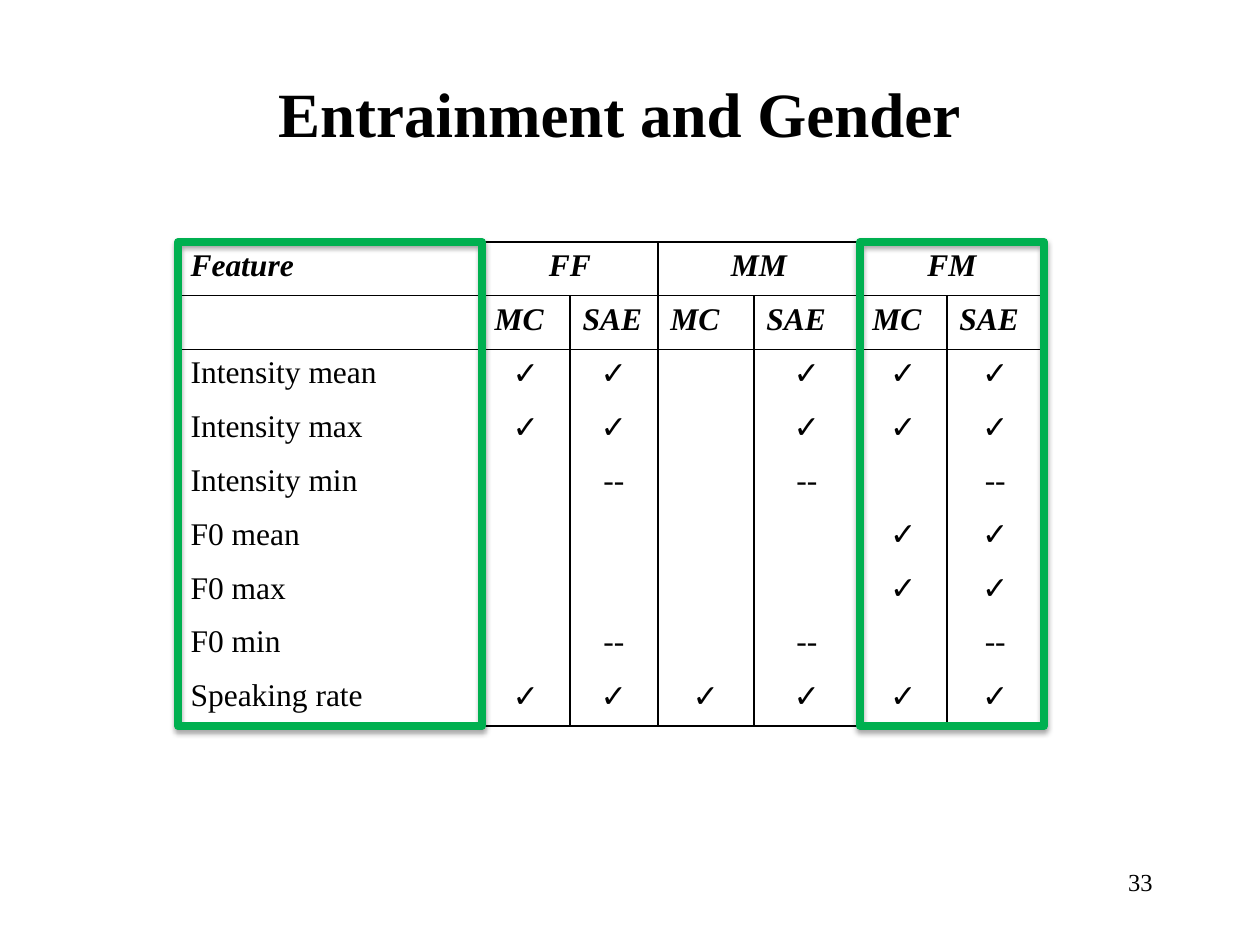
import pptx
import pptx.util
import pptx.oxml
import pptx.oxml.ns
import pptx.dml.color
import pptx.enum.shapes
import pptx.enum.text

SCALE = 914400 / 126  # EMU in one px
COLORS = {"ink": "000000", "mark": "00B050"}
SERIF, SANS = "Times New Roman", "Arial"
ALIGN = pptx.enum.text.PP_ALIGN
ANCHOR = pptx.enum.text.MSO_ANCHOR

# Table content
GROUPS = ["FF", "MM", "FM"]
CORPORA = ["MC", "SAE"]
ROWS = [
    ["Intensity mean", "✓", "✓", "", "✓", "✓", "✓"],
    ["Intensity max", "✓", "✓", "", "✓", "✓", "✓"],
    ["Intensity min", "", "--", "", "--", "", "--"],
    ["F0 mean", "", "", "", "", "✓", "✓"],
    ["F0 max", "", "", "", "", "✓", "✓"],
    ["F0 min", "", "--", "", "--", "", "--"],
    ["Speaking rate", "✓", "✓", "✓", "✓", "✓", "✓"],
]
WIDTHS = [304, 88, 88, 96, 106, 87, 97]
LEFT, TOP, HEIGHT = 178, 242, 484


def px(n):
    return pptx.util.Emu(round(n * SCALE))


def rgb(name):
    return pptx.dml.color.RGBColor.from_string(COLORS[name])


def write(frame, text, align, **form):
    """Fill a text frame with one formatted line."""
    par = frame.paragraphs[0]
    par.alignment = align
    run = par.add_run()
    run.text = text
    look = {"name": SERIF, "size": pptx.util.Pt(18), "bold": False, "italic": False}
    for key, value in (look | form).items():
        setattr(run.font, key, value)
    run.font.color.rgb = rgb("ink")


def label(slide, box, text, align, anchor, **form):
    frame = slide.shapes.add_textbox(*map(px, box)).text_frame
    frame.word_wrap = True
    frame.vertical_anchor = anchor
    write(frame, text, align, **form)


def rule(cell, sides):
    """Draw thin lines on the named sides and none on the rest."""
    props = cell._tc.get_or_add_tcPr()
    for side in "LRTB":
        fill = "<a:noFill/>"
        if side in sides:
            fill = f'<a:solidFill><a:srgbClr val="{COLORS["ink"]}"/></a:solidFill>'
        props.append(pptx.oxml.parse_xml(
            f'<a:ln{side} {pptx.oxml.ns.nsdecls("a")} w="12700">{fill}</a:ln{side}>'))
    cell.fill.background()


def grid(slide):
    head = ["Feature"] + [text for group in GROUPS for text in (group, "")]
    rows = [head, [""] + CORPORA * len(GROUPS)] + ROWS
    table = slide.shapes.add_table(
        len(rows), len(WIDTHS), px(LEFT), px(TOP), px(sum(WIDTHS)), px(HEIGHT)).table
    table.first_row = table.horz_banding = False
    for col, width in zip(table.columns, WIDTHS):
        col.width = px(width)
    for r, texts in enumerate(rows):
        table.rows[r].height = px(HEIGHT / len(rows))
        for c, text in enumerate(texts):
            cell = table.cell(r, c)
            top = "T" if r <= 2 else ""
            base = "B" if r < 2 or r == len(rows) - 1 else ""
            rule(cell, "LR" + top + base)
            if text:
                center = c > 0 and r != 1
                write(cell.text_frame, text, ALIGN.CENTER if center else ALIGN.LEFT,
                      name=SANS if text == "✓" else SERIF, bold=r < 2, italic=r < 2)
    for c in range(1, len(WIDTHS), 2):
        table.cell(0, c).merge(table.cell(0, c + 1))


def frame(slide, first, last):
    """Outline a run of table columns."""
    left = LEFT + sum(WIDTHS[:first])
    box = left, TOP, sum(WIDTHS[first:last + 1]), HEIGHT
    shape = slide.shapes.add_shape(
        pptx.enum.shapes.MSO_SHAPE.RECTANGLE, *map(px, box))
    shape.fill.background()
    shape.line.color.rgb = rgb("mark")
    shape.line.width = pptx.util.Pt(4.5)
    shape.shadow.inherit = False
    effects = shape._element.spPr.find(pptx.oxml.ns.qn("a:effectLst"))
    effects.append(pptx.oxml.parse_xml(
        f'<a:outerShdw {pptx.oxml.ns.nsdecls("a")} blurRad="40000" dist="23000" '
        f'dir="5400000" rotWithShape="0"><a:srgbClr val="{COLORS["ink"]}">'
        '<a:alpha val="35000"/></a:srgbClr></a:outerShdw>'))


def main():
    deck = pptx.Presentation()
    deck.slide_width, deck.slide_height = px(1260), px(945)
    slide = deck.slides.add_slide(deck.slide_layouts[6])
    # Title and page number
    label(slide, (84, 49, 1071, 127), "Entrainment and Gender", ALIGN.CENTER,
          ANCHOR.MIDDLE, size=pptx.util.Pt(36), bold=True)
    label(slide, (903, 861, 262, 63), "33", ALIGN.RIGHT, ANCHOR.TOP,
          size=pptx.util.Pt(14))
    # Results, with the FM and feature columns marked
    grid(slide)
    frame(slide, 5, 6)
    frame(slide, 0, 0)
    deck.save("out.pptx")


if __name__ == "__main__":
    main()
